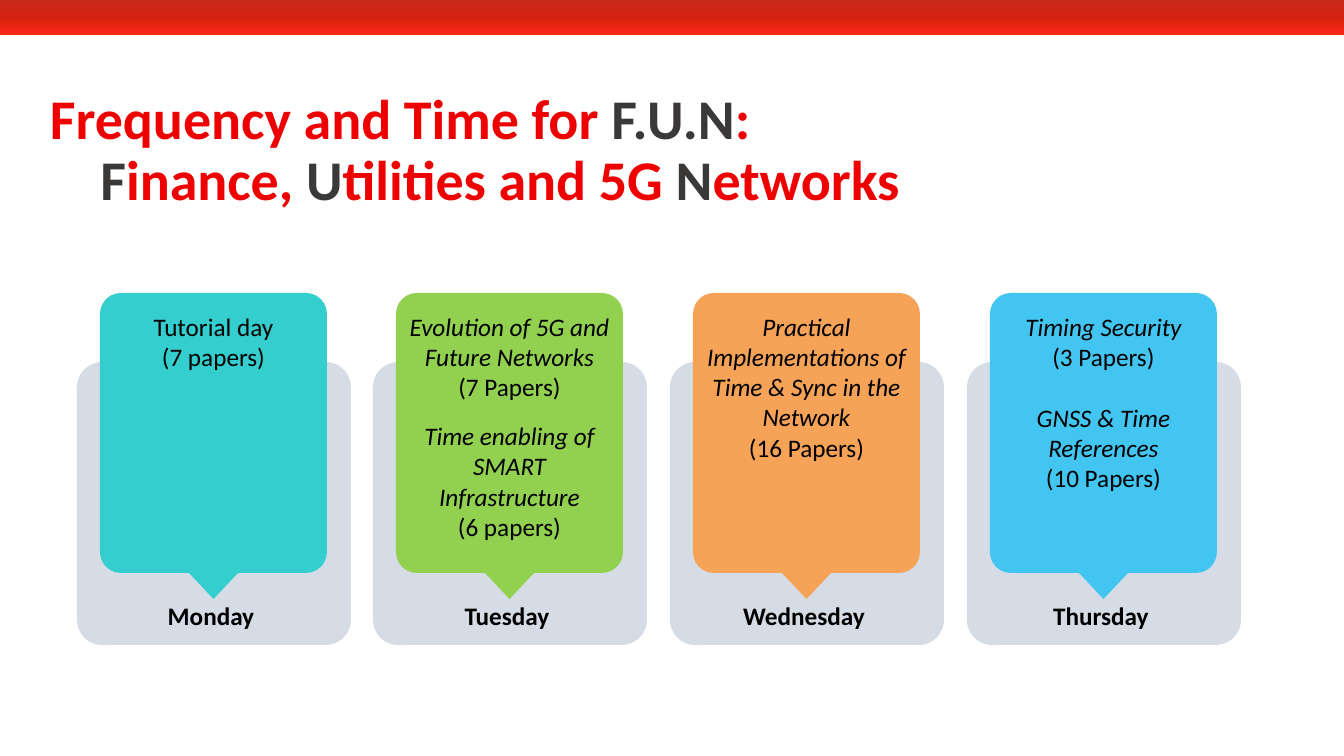
from copy import deepcopy

from pptx import Presentation
from pptx.dml.color import RGBColor
from pptx.enum.shapes import MSO_SHAPE
from pptx.enum.text import MSO_ANCHOR, PP_ALIGN
from pptx.oxml.ns import qn
from pptx.util import Pt

PX = 914400 / 100.8
RED, DARK, BLACK, CARD_GREY = "EE0000", "3B3838", "000000", "D6DCE5"
BAR_STOPS = [(0, "C52A1D"), (0.5, "D52212"), (1, "FD2815")]

# Title lines as (text, colour) spans
TITLE = [
    [("Frequency and Time for ", RED), ("F.U.N", DARK), (":", RED)],
    [("\t", RED), ("F", DARK), ("inance, ", RED), ("U", DARK),
     ("tilities and 5G ", RED), ("N", DARK), ("etworks", RED)],
]

# Day, colour, topics as (name, paper count), name in italics, gap between topics in points
DAYS = [
    ("Monday", "35CECF", [("Tutorial day", "(7 papers)")], False, 0),
    ("Tuesday", "92D050", [
        ("Evolution of 5G and Future Networks", "(7 Papers)"),
        ("Time enabling of SMART Infrastructure", "(6 papers)")], True, 13.4),
    ("Wednesday", "F6A257", [
        ("Practical Implementations of Time & Sync in the Network", "(16 Papers)")], True, 0),
    ("Thursday", "43C5F2", [
        ("Timing Security", "(3 Papers)"),
        ("GNSS & Time References", "(10 Papers)")], True, 22),
]


def px(length):
    return round(length * PX)


def colour(value):
    return RGBColor.from_string(value)


class Page:
    font = "Calibri"

    def __init__(self, deck):
        self.slide = deck.slides.add_slide(deck.slide_layouts[6])
        self.shapes = self.slide.shapes

    def start_group(self):
        """Send the elements that follow into a new group."""
        self.shapes = self.slide.shapes.add_group_shape().shapes

    def shape(self, kind, left, top, width, height, fill=None):
        shape = self.shapes.add_shape(kind, px(left), px(top), px(width), px(height))
        shape.shadow.inherit = False
        shape.line.fill.background()
        if fill:
            shape.fill.solid()
            shape.fill.fore_color.rgb = colour(fill)
        return shape

    def rounded(self, left, top, width, height, fill):
        self.shape(MSO_SHAPE.ROUNDED_RECTANGLE, left, top, width, height,
                   fill).adjustments[0] = 0.092

    def pointer(self, left, top, width, height, fill):
        self.shape(MSO_SHAPE.ISOSCELES_TRIANGLE, left, top, width, height, fill).rotation = 180

    def gradient_bar(self, left, top, width, height, stops):
        bar = self.shape(MSO_SHAPE.RECTANGLE, left, top, width, height)
        bar.fill.gradient()
        bar.fill.gradient_angle = 270
        stop_list = bar._element.spPr.find(qn("a:gradFill")).find(qn("a:gsLst"))
        stop_list.append(deepcopy(stop_list[0]))
        for stop, (position, value) in zip(bar.fill.gradient_stops, stops):
            stop.position = position
            stop.color.rgb = colour(value)

    def text_frame(self, left, top, width, height):
        box = self.shapes.add_textbox(px(left), px(top), px(width), px(height))
        box.text_frame.word_wrap = True
        return box.text_frame

    def style(self, paragraph, size, bold=False):
        paragraph.font.name = self.font
        paragraph.font.size = Pt(size)
        paragraph.font.bold = bold

    def span(self, paragraph, text, value=BLACK, italic=False):
        span = paragraph.add_run()
        span.text = text
        span.font.color.rgb = colour(value)
        if italic:
            span.font.italic = True

    def title(self, left, top, width, height, lines):
        frame = self.text_frame(left, top, width, height)
        frame.vertical_anchor = MSO_ANCHOR.MIDDLE
        frame.margin_left = frame.margin_right = frame.margin_top = frame.margin_bottom = 0
        paragraph = frame.paragraphs[0]
        paragraph.line_spacing = 0.9
        self.style(paragraph, 40, bold=True)
        for index, line in enumerate(lines):
            if index:
                paragraph.add_line_break()
            for text, value in line:
                self.span(paragraph, text, value)

    def topics(self, left, top, width, height, topics, italic, gap):
        frame = self.text_frame(left, top, width, height)
        for index, (name, papers) in enumerate(topics):
            paragraph = frame.add_paragraph() if index else frame.paragraphs[0]
            paragraph.alignment = PP_ALIGN.CENTER
            if index:
                paragraph.space_before = Pt(gap)
            self.style(paragraph, 18)
            self.span(paragraph, name, italic=italic)
            paragraph.add_line_break()
            self.span(paragraph, papers)

    def label(self, left, top, width, height, text):
        paragraph = self.text_frame(left, top, width, height).paragraphs[0]
        paragraph.alignment = PP_ALIGN.CENTER
        self.style(paragraph, 18, bold=True)
        self.span(paragraph, text)

    def day_card(self, left, day, fill, topics, italic, gap):
        self.start_group()
        self.rounded(left, 362, 274, 283, CARD_GREY)
        self.rounded(left + 23, 293, 227, 280, fill)
        self.pointer(left + 112, 573, 49, 26, fill)
        self.topics(left + 23, 306, 227, 244, topics, italic, gap)
        self.label(left - 3, 595, 274, 40, day)


def main():
    deck = Presentation()
    deck.slide_width, deck.slide_height = px(1344), px(756)
    page = Page(deck)
    page.gradient_bar(0, -1, 1344, 36, BAR_STOPS)
    page.title(50, 91, 981, 122, TITLE)
    for column, day in enumerate(DAYS):
        page.day_card(77 + column * 890 // 3, *day)
    deck.save("out.pptx")


if __name__ == "__main__":
    main()
